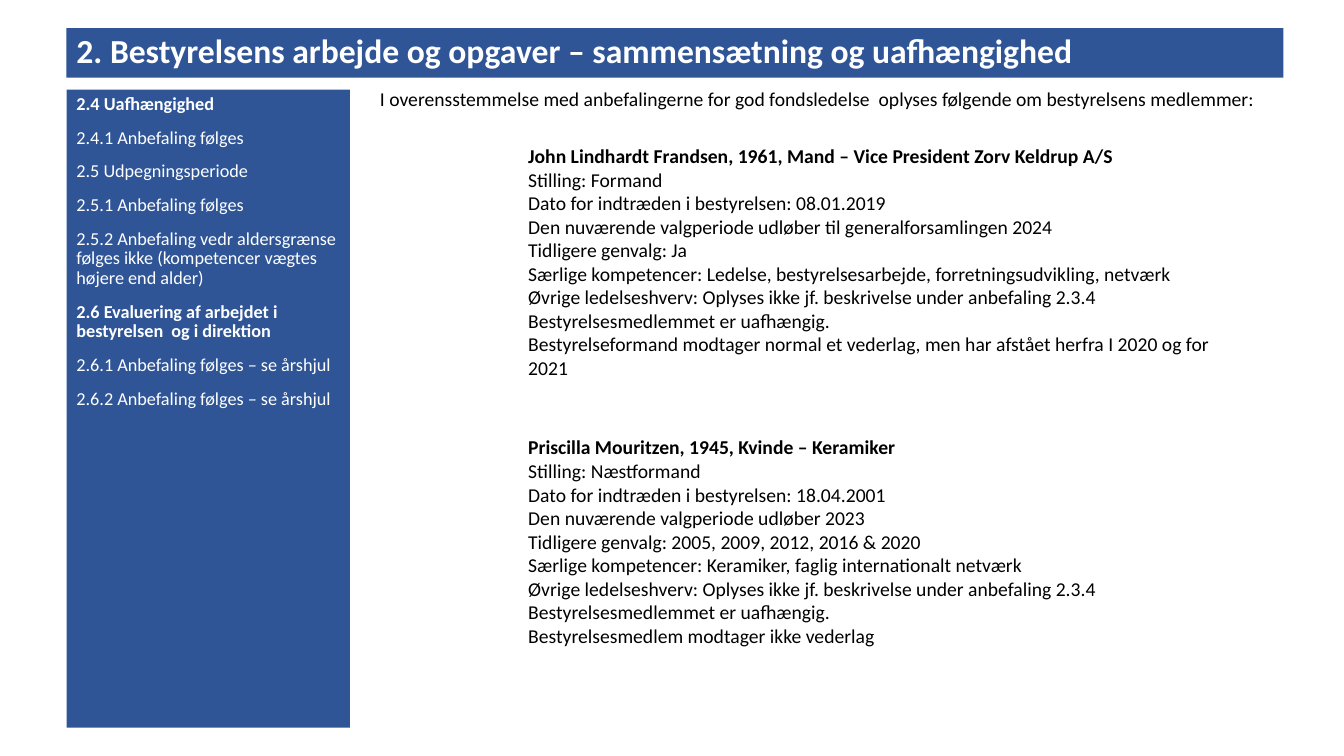
from dataclasses import dataclass

import pptx
import pptx.dml.color
import pptx.enum.shapes
import pptx.enum.text
import pptx.slide
import pptx.util

Inches = pptx.util.Inches
Pt = pptx.util.Pt
RGBColor = pptx.dml.color.RGBColor
ANCHOR = pptx.enum.text.MSO_ANCHOR

BLUE = RGBColor(0x2F, 0x55, 0x97)
WHITE = RGBColor(0xFF, 0xFF, 0xFF)
BLACK = RGBColor(0x00, 0x00, 0x00)
FONT = "Calibri"


@dataclass
class TextBlock:
    left: float
    top: float
    width: float
    height: float
    lines: list[str]
    size: int = 14
    bold_lines: tuple[int, ...] = ()
    filled: bool = False
    anchor: ANCHOR = ANCHOR.TOP
    line_spacing: float = 1.0
    space_before: int = 0


def member_block(top: float, height: float, lines: list[str]) -> TextBlock:
    """Board member details with the name line in bold."""
    return TextBlock(5.14, top, 6.98, height, lines, bold_lines=(0,))


def draw_block(slide: pptx.slide.Slide, block: TextBlock) -> None:
    box = [Inches(v) for v in (block.left, block.top, block.width, block.height)]
    if block.filled:
        sp = slide.shapes.add_shape(pptx.enum.shapes.MSO_SHAPE.RECTANGLE, *box)
        sp.shadow.inherit = False
        sp.fill.solid()
        sp.fill.fore_color.rgb = BLUE
        sp.line.fill.background()
    else:
        sp = slide.shapes.add_textbox(*box)

    tf = sp.text_frame
    tf.word_wrap = True
    tf.vertical_anchor = block.anchor
    tf.text = "\n".join(block.lines)
    for i, p in enumerate(tf.paragraphs):
        p.alignment = pptx.enum.text.PP_ALIGN.LEFT
        p.line_spacing = block.line_spacing
        p.space_before = Pt(block.space_before)
        for r in p.runs:
            r.font.name = FONT
            r.font.size = Pt(block.size)
            r.font.bold = i in block.bold_lines
            r.font.color.rgb = WHITE if block.filled else BLACK


BLOCKS = [
    # Sidebar with recommendations
    TextBlock(0.66, 0.89, 2.81, 6.33, [
        "2.4 Uafhængighed",
        "2.4.1 Anbefaling følges",
        "2.5 Udpegningsperiode",
        "2.5.1 Anbefaling følges",
        "2.5.2 Anbefaling vedr aldersgrænse følges ikke (kompetencer vægtes højere end alder)",
        "2.6 Evaluering af arbejdet i bestyrelsen  og i direktion",
        "2.6.1 Anbefaling følges – se årshjul",
        "2.6.2 Anbefaling følges – se årshjul",
    ], size=13, bold_lines=(0, 5), filled=True, line_spacing=0.9, space_before=10),
    # Title bar
    TextBlock(0.66, 0.28, 12.07, 0.49, [
        "2. Bestyrelsens arbejde og opgaver – sammensætning og uafhængighed",
    ], size=24, bold_lines=(0,), filled=True, anchor=ANCHOR.MIDDLE, line_spacing=0.9),
    # Introduction
    TextBlock(3.67, 0.81, 9.06, 0.34, [
        "I overensstemmelse med anbefalingerne for god fondsledelse  oplyses "
        "følgende om bestyrelsens medlemmer:",
    ]),
    # Board members
    member_block(1.38, 2.46, [
        "John Lindhardt Frandsen, 1961, Mand – Vice President Zorv Keldrup A/S",
        "Stilling: Formand",
        "Dato for indtræden i bestyrelsen: 08.01.2019",
        "Den nuværende valgperiode udløber til generalforsamlingen 2024",
        "Tidligere genvalg: Ja",
        "Særlige kompetencer: Ledelse, bestyrelsesarbejde, forretningsudvikling, netværk",
        "Øvrige ledelseshverv: Oplyses ikke jf. beskrivelse under anbefaling 2.3.4",
        "Bestyrelsesmedlemmet er uafhængig.",
        "Bestyrelseformand modtager normal et vederlag, men har afstået herfra "
        "I 2020 og for 2021",
    ]),
    member_block(4.27, 2.22, [
        "Priscilla Mouritzen, 1945, Kvinde – Keramiker",
        "Stilling: Næstformand",
        "Dato for indtræden i bestyrelsen: 18.04.2001",
        "Den nuværende valgperiode udløber 2023",
        "Tidligere genvalg: 2005, 2009, 2012, 2016 & 2020",
        "Særlige kompetencer: Keramiker, faglig internationalt netværk",
        "Øvrige ledelseshverv: Oplyses ikke jf. beskrivelse under anbefaling 2.3.4",
        "Bestyrelsesmedlemmet er uafhængig.",
        "Bestyrelsesmedlem modtager ikke vederlag",
    ]),
]


def main() -> None:
    prs = pptx.Presentation()
    prs.slide_width = Inches(13.33)
    prs.slide_height = Inches(7.5)
    s = prs.slides.add_slide(prs.slide_layouts[6])
    for block in BLOCKS:
        draw_block(s, block)
    prs.save("out.pptx")


if __name__ == "__main__":
    main()
